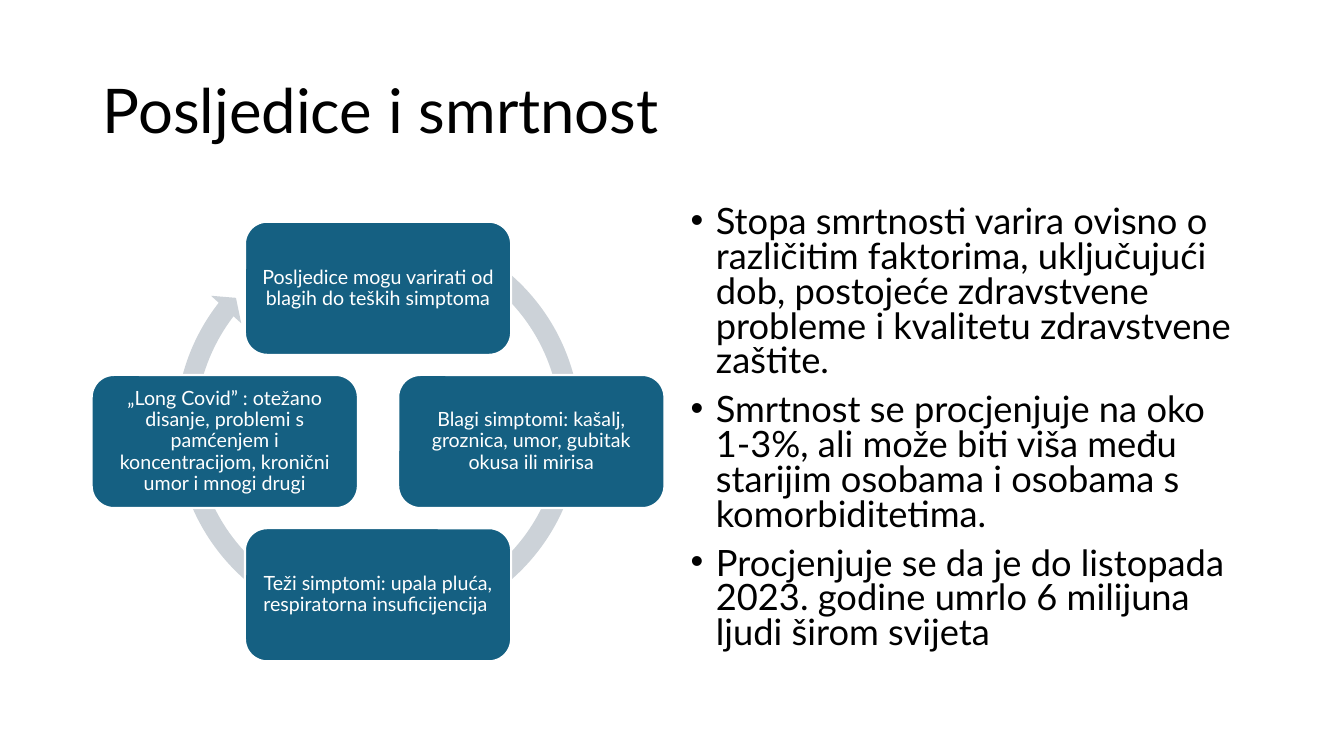
from pptx import Presentation
from pptx import util as u
from pptx.dml.color import RGBColor
from pptx.enum import shapes, text

FONT = "Lato"
BLACK = RGBColor(0x00, 0x00, 0x00)
WHITE = RGBColor(0xFF, 0xFF, 0xFF)
BLUE = RGBColor(0x15, 0x60, 0x82)
GREY = RGBColor(0xCC, 0xD2, 0xD8)


def style_paragraph(paragraph, size, color, alignment, line_spacing):
    paragraph.alignment = alignment
    paragraph.line_spacing = line_spacing
    for run in paragraph.runs:
        run.font.name = FONT
        run.font.size = u.Pt(size)
        run.font.color.rgb = color


def place(shape, left, top, width, height):
    shape.left, shape.top = u.Inches(left), u.Inches(top)
    shape.width, shape.height = u.Inches(width), u.Inches(height)


presentation = Presentation()
presentation.slide_width = u.Inches(13.33)
presentation.slide_height = u.Inches(7.5)
slide = presentation.slides.add_slide(presentation.slide_layouts[1])

# Title
title = slide.shapes.title
place(title, 0.92, 0.4, 11.5, 1.45)
title.text_frame.text = "Posljedice i smrtnost"
title.text_frame.auto_size = text.MSO_AUTO_SIZE.NONE
title.text_frame.vertical_anchor = text.MSO_ANCHOR.MIDDLE
style_paragraph(title.text_frame.paragraphs[0], 44, BLACK, text.PP_ALIGN.LEFT, 0.9)

# Circular arrow behind the cycle
arrow = slide.shapes.add_shape(
    shapes.MSO_SHAPE.CIRCULAR_ARROW,
    u.Inches(1.64), u.Inches(2.13), u.Inches(4.22), u.Inches(4.22))
for index, value in enumerate((0.047, 2.73, 130.68, 178.72, 0.048)):
    arrow.adjustments[index] = value
arrow.shadow.inherit = False
arrow.fill.solid()
arrow.fill.fore_color.rgb = GREY
arrow.line.fill.background()

# Cycle steps, clockwise from the top
CENTER_X, CENTER_Y, RADIUS = 3.75, 4.38, 1.52
STEP_WIDTH, STEP_HEIGHT = 2.64, 1.32
steps = [
    (0, -1, "Posljedice mogu varirati od blagih do teških simptoma"),
    (1, 0, "Blagi simptomi: kašalj, groznica, umor, gubitak okusa ili mirisa"),
    (0, 1, "Teži simptomi: upala pluća, respiratorna insuficijencija "),
    (-1, 0, "„Long Covid” : otežano disanje, problemi s pamćenjem i "
            "koncentracijom, kronični umor i mnogi drugi"),
]
for direction_x, direction_y, wording in steps:
    step = slide.shapes.add_shape(
        shapes.MSO_SHAPE.ROUNDED_RECTANGLE,
        u.Inches(CENTER_X + RADIUS * direction_x - STEP_WIDTH / 2),
        u.Inches(CENTER_Y + RADIUS * direction_y - STEP_HEIGHT / 2),
        u.Inches(STEP_WIDTH), u.Inches(STEP_HEIGHT))
    step.shadow.inherit = False
    step.fill.solid()
    step.fill.fore_color.rgb = BLUE
    step.line.color.rgb = WHITE
    step.line.width = u.Pt(1.5)
    frame = step.text_frame
    frame.text = wording
    frame.word_wrap = True
    frame.vertical_anchor = text.MSO_ANCHOR.MIDDLE
    frame.margin_left = frame.margin_right = u.Inches(0.06)
    frame.margin_top = frame.margin_bottom = u.Inches(0.06)
    style_paragraph(frame.paragraphs[0], 14, WHITE, text.PP_ALIGN.CENTER, 0.9)

# Mortality bullets, using the template's bullet character
body = slide.placeholders[1]
place(body, 6.75, 2, 5.67, 4.76)
body.text_frame.text = "\n".join([
    "Stopa smrtnosti varira ovisno o različitim faktorima, uključujući dob, "
    "postojeće zdravstvene probleme i kvalitetu zdravstvene zaštite.",
    "Smrtnost se procjenjuje na oko 1-3%, ali može biti viša među starijim "
    "osobama i osobama s komorbiditetima.",
    "Procjenjuje se da je do listopada 2023. godine umrlo 6 milijuna ljudi "
    "širom svijeta",
])
body.text_frame.auto_size = text.MSO_AUTO_SIZE.NONE
for paragraph in body.text_frame.paragraphs:
    style_paragraph(paragraph, 25.9, BLACK, text.PP_ALIGN.LEFT, 0.8)
    paragraph.space_before = u.Pt(10)
    properties = paragraph._p.get_or_add_pPr()
    properties.set("marL", str(u.Inches(0.25)))
    properties.set("indent", str(u.Inches(-0.25)))

presentation.save("out.pptx")
